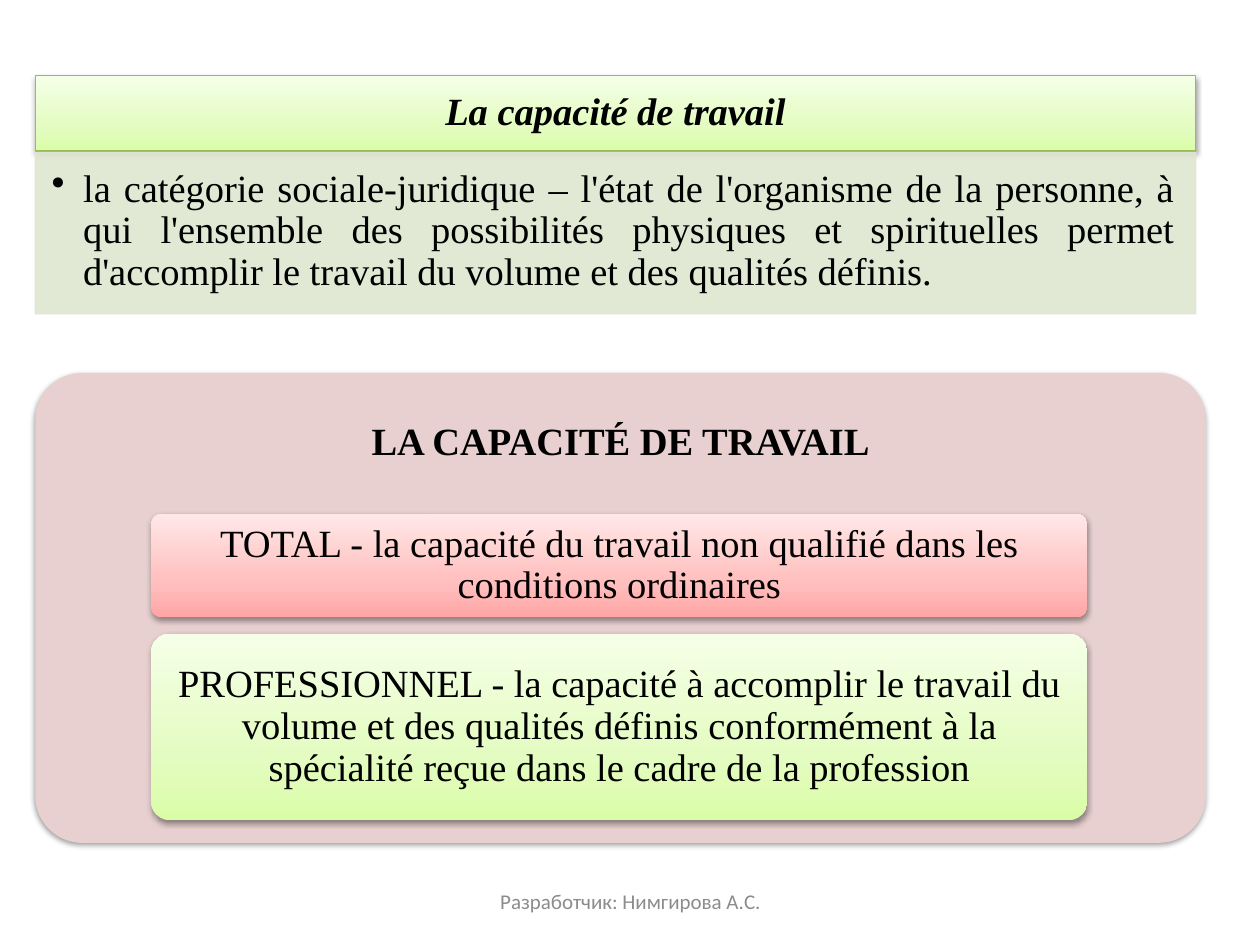
from copy import deepcopy
from pptx import Presentation
from pptx.dml.color import RGBColor
from pptx.enum.shapes import MSO_SHAPE
from pptx.enum.text import MSO_ANCHOR, PP_ALIGN
from pptx.oxml.ns import qn
from pptx.util import Inches, Pt
from lxml import etree

RECT, ROUND = MSO_SHAPE.RECTANGLE, MSO_SHAPE.ROUNDED_RECTANGLE
TOP, MIDDLE = MSO_ANCHOR.TOP, MSO_ANCHOR.MIDDLE
CENTER, JUSTIFY = PP_ALIGN.CENTER, PP_ALIGN.JUSTIFY
SIDES = ("left", "top", "right", "bottom")
STOPS = (0, 0.35, 1)
GREEN = ("DAFDA7", "E4FCC2", "F5FFE7")
RED = ("FFA6A5", "FFC0BF", "FFE7E7")


def paint(text):
    return RGBColor.from_string(text)


def apply(item, values):
    for name, value in values.items():
        setattr(item, name, value)


def add(parent, tag, **values):
    node = etree.SubElement(parent, qn(tag))
    for name, value in values.items():
        node.set(name, str(value))
    return node


class Board:
    font = {"name": "Times New Roman", "size": Pt(22)}
    ink = "000000"

    def __init__(self, slide):
        self.slide = slide

    def shape(self, kind, box, fill, line=None, shadow=True):
        shape = self.slide.shapes.add_shape(kind, *map(Inches, box))
        if kind == ROUND:
            shape.adjustments[0] = 0.1
        if isinstance(fill, tuple):
            self.blend(shape, fill)
        else:
            shape.fill.solid()
            shape.fill.fore_color.rgb = paint(fill)
        if line:
            shape.line.color.rgb = paint(line)
            shape.line.width = Pt(0.75)
        else:
            shape.line.fill.background()
        shape.shadow.inherit = False
        if shadow:
            self.shade(shape)
        return shape

    def blend(self, shape, colors):
        shape.fill.gradient()
        shape.fill.gradient_angle = 90
        stops = next(shape.element.iter(qn("a:gsLst")))
        stops.append(deepcopy(stops[0]))
        for stop, place, color in zip(shape.fill.gradient_stops, STOPS, colors):
            stop.position = place
            stop.color.rgb = paint(color)

    def shade(self, shape):
        effects = next(shape.element.iter(qn("a:effectLst")))
        shadow = add(effects, "a:outerShdw", blurRad=Pt(3.1), dist=Pt(1.6),
                     dir=5400000, rotWithShape=0)
        add(add(shadow, "a:srgbClr", val=self.ink), "a:alpha", val=38000)

    def fade(self, shape, share):
        for color in shape.element.spPr.iter(qn("a:srgbClr")):
            add(color, "a:alpha", val=share * 1000)

    def text(self, shape, words, pads, anchor=MIDDLE, align=CENTER,
             space=0.9, ink=None, **extra):
        frame = shape.text_frame
        margins = {f"margin_{side}": Inches(pad) for side, pad in zip(SIDES, pads)}
        apply(frame, {"word_wrap": True, "vertical_anchor": anchor, **margins})
        line = frame.paragraphs[0]
        apply(line, {"alignment": align, "line_spacing": space})
        run = line.add_run()
        run.text = words
        apply(run.font, {**self.font, **extra})
        run.font.color.rgb = paint(ink or self.ink)
        return line

    def label(self, box, words, pads, **style):
        shape = self.slide.shapes.add_textbox(*map(Inches, box))
        self.text(shape, words, pads, **style)

    def bullet(self, line, indent):
        props = line._p.get_or_add_pPr()
        props.set("marL", str(Inches(indent)))
        props.set("indent", str(-Inches(indent)))
        add(props, "a:buChar", char="•")


def main():
    deck = Presentation()
    deck.slide_width, deck.slide_height = Inches(10), Inches(7.5)
    board = Board(deck.slides.add_slide(deck.slide_layouts[6]))

    head = board.shape(RECT, (0.28, 0.6, 9.21, 0.6), GREEN, "9BBB59")
    board.text(head, "La capacité de travail", (0.17, 0.1, 0.17, 0.1),
               bold=True, italic=True)

    body = board.shape(RECT, (0.28, 1.21, 9.21, 1.28), "DEE7D1", "DEE7D1", False)
    board.fade(body, 90)
    line = board.text(
        body,
        "la catégorie sociale-juridique – l'état de l'organisme de la personne, "
        "à qui l'ensemble des possibilités physiques et spirituelles permet "
        "d'accomplir le travail du volume et des qualités définis.",
        (0.13, 0.13, 0.17, 0.19), TOP, JUSTIFY)
    board.bullet(line, 0.25)

    board.shape(ROUND, (0.28, 2.96, 9.29, 3.73), "E8D0D0")
    board.label((0.28, 2.96, 9.29, 1.12), "LA CAPACITÉ DE TRAVAIL",
                (0.09,) * 4, bold=True)

    kinds = (
        (4.08, 0.82, RED, "TOTAL - la capacité du travail non qualifié dans les "
         "conditions ordinaires"),
        (5.03, 1.48, GREEN, "PROFESSIONNEL - la capacité à accomplir le travail du "
         "volume et des qualités définis conformément à la spécialité reçue dans "
         "le cadre de la profession"),
    )
    for top, height, fill, words in kinds:
        card = board.shape(ROUND, (1.2, top, 7.43, height), fill)
        board.text(card, words, (0.08, 0.05, 0.08, 0.05))

    board.label((3.42, 6.95, 3.17, 0.4), "Разработчик: Нимгирова А.С.",
                (0.1, 0.05, 0.1, 0.05), space=1.0, ink="8C8C8C",
                name="Calibri", size=Pt(12))
    deck.save("out.pptx")


if __name__ == "__main__":
    main()
